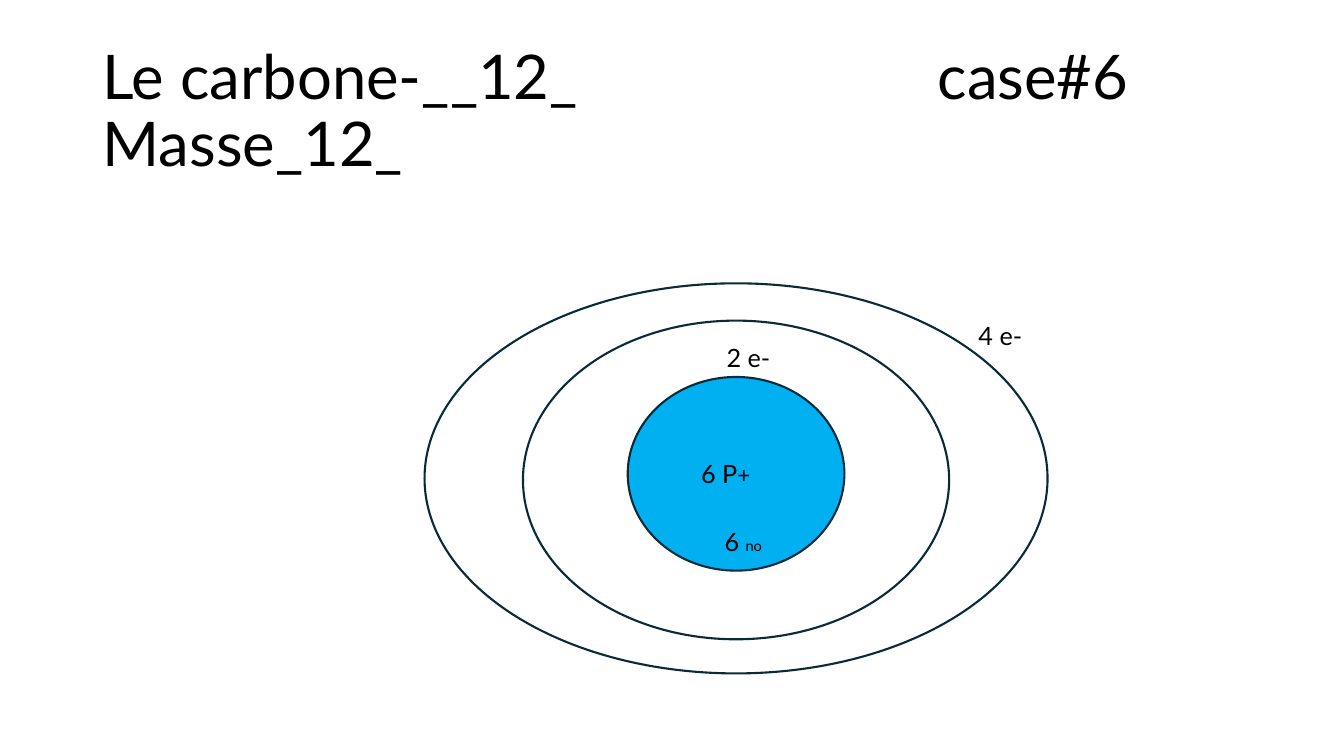
from dataclasses import dataclass

from lxml import etree
from pptx import Presentation
from pptx.dml.color import RGBColor
from pptx.enum.shapes import MSO_SHAPE
from pptx.enum.text import MSO_ANCHOR, MSO_AUTO_SIZE, PP_ALIGN
from pptx.oxml.ns import qn
from pptx.slide import Slide
from pptx.util import Cm, Pt

OVAL = MSO_SHAPE.OVAL
MIDDLE = MSO_ANCHOR.MIDDLE
NO_FIT = MSO_AUTO_SIZE.NONE
GROW = MSO_AUTO_SIZE.SHAPE_TO_FIT_TEXT
LEFT = PP_ALIGN.LEFT
TITLE_ONLY = 5

FONT = "Lato"
BLACK = "000000"
OUTLINE = "092A39"
NUCLEUS_BLUE = "00B0F0"
ATOM_CENTER = 18.55
CASE_TAB = 21.05


@dataclass
class Ring:
    top: float
    width: float
    height: float
    fill: str = ""


@dataclass
class Label:
    left: float
    top: float
    text: str
    suffix: str = ""
    suffix_size: float = 18


RINGS = [
    Ring(7.14, 15.7, 9.83),
    Ring(8.08, 10.74, 8.03),
    Ring(9.5, 5.46, 4.88, NUCLEUS_BLUE),
]
LABELS = [
    Label(17.42, 11.43, "6 P", "+", 16),
    Label(18.06, 8.51, "2 e-"),
    Label(24.41, 7.95, "4 e-"),
    Label(18.01, 13.13, "6 ", "no", 10.5),
]


def color(value: str) -> RGBColor:
    return RGBColor.from_string(value)


def set_font(font, size: float) -> None:
    font.name = FONT
    font.size = Pt(size)
    font.color.rgb = color(BLACK)


def fill_title(page: Slide) -> None:
    title = page.shapes.title
    title.left, title.top = Cm(2.33), Cm(1.01)
    title.width, title.height = Cm(29.21), Cm(3.68)
    frame = title.text_frame
    frame.auto_size = NO_FIT
    frame.vertical_anchor = MIDDLE
    para = frame.paragraphs[0]
    para.text = "Le carbone-__12_\tcase#6\vMasse_12_"
    para.alignment = LEFT
    para.line_spacing = 0.9
    properties = para._p.get_or_add_pPr()
    tabs = etree.SubElement(properties, qn("a:tabLst"))
    etree.SubElement(tabs, qn("a:tab"), pos=str(Cm(CASE_TAB)), algn="l")
    set_font(para.font, 44)


def add_ring(page: Slide, ring: Ring) -> None:
    shape = page.shapes.add_shape(
        OVAL,
        Cm(ATOM_CENTER - ring.width / 2),
        Cm(ring.top),
        Cm(ring.width),
        Cm(ring.height),
    )
    shape.shadow.inherit = False
    if ring.fill:
        shape.fill.solid()
        shape.fill.fore_color.rgb = color(ring.fill)
    else:
        shape.fill.background()
    shape.line.color.rgb = color(OUTLINE)
    shape.line.width = Pt(1.5)


def add_label(page: Slide, label: Label) -> None:
    box = page.shapes.add_textbox(Cm(label.left), Cm(label.top), Cm(7.62), Cm(1.02))
    frame = box.text_frame
    frame.word_wrap = True
    frame.auto_size = GROW
    para = frame.paragraphs[0]
    para.text = label.text
    set_font(para.font, 18)
    if label.suffix:
        span = para.add_run()
        span.text = label.suffix
        span.font.size = Pt(label.suffix_size)


def main() -> None:
    deck = Presentation()
    deck.slide_width, deck.slide_height = Cm(33.87), Cm(19.05)
    page = deck.slides.add_slide(deck.slide_layouts[TITLE_ONLY])
    fill_title(page)
    for ring in RINGS:
        add_ring(page, ring)
    for label in LABELS:
        add_label(page, label)
    deck.save("out.pptx")


if __name__ == "__main__":
    main()
